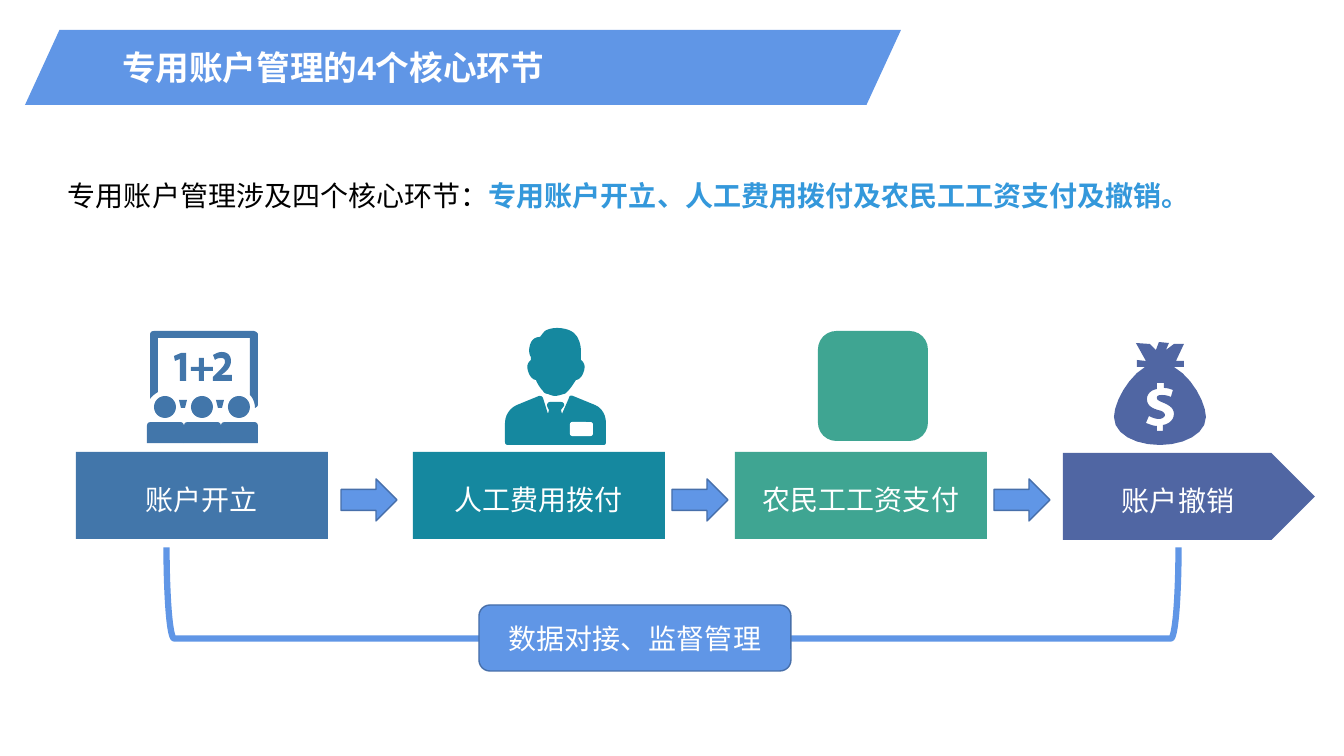
from pptx import Presentation
from pptx import util as u
from pptx.dml.color import RGBColor
from pptx.enum import shapes, text

PX = 914400 / 100.8
FONT = "Arial"
WHITE, BLACK, BLUE, EDGE, ACCENT = "FFFFFF", "000000", "6096E6", "476FAA", "3498DB"
OPENING, LABOUR, WAGES, CLOSING = "4276AA", "15889F", "3FA592", "5066A3"
KIND = shapes.MSO_SHAPE

BOARD = [(154, 331), (254, 331), (257, 332, 258, 333, 258, 335), (258, 404),
         (258, 406, 257, 407, 255, 408), (255, 403, 253, 398, 250, 395), (250, 338),
         (158, 338), (158, 392), (155, 394, 152, 396, 150, 399), (150, 335),
         (150, 333, 151, 331, 154, 331)]
ONE = [(181, 353), (186, 353), (186, 381), (180, 381), (180, 359), (175, 361), (174, 356)]
PLUS = [(199, 358), (204, 358), (204, 367), (213, 367), (213, 371), (204, 371),
        (204, 381), (199, 381), (199, 371), (191, 371), (191, 367), (199, 367)]
TWO = [(222, 352), (228, 352, 231, 356, 231, 361), (231, 366, 228, 370, 224, 373),
       (221, 375), (232, 375), (232, 381), (213, 381), (213, 377), (216, 374),
       (222, 368, 225, 365, 225, 362), (225, 359, 224, 358, 221, 358),
       (218, 358, 216, 359, 215, 360), (213, 355), (215, 354, 218, 352, 222, 352)]
SUIT = [(539, 396), (541, 396, 542, 396, 543, 398), (548, 414), (549, 410), (547, 406),
        (547, 404, 548, 402, 550, 402), (561, 402), (563, 402, 565, 404, 564, 406),
        (561, 410), (562, 414), (569, 398), (569, 396, 571, 395, 573, 396), (595, 405),
        (602, 408, 606, 415, 606, 423), (606, 442), (606, 444, 605, 445, 604, 445),
        (508, 445), (506, 445, 505, 444, 505, 442), (505, 423),
        (505, 415, 510, 408, 517, 405)]
HEAD = [(557, 328), (562, 328, 569, 329, 574, 333), (582, 340, 581, 353, 581, 355),
        (581, 360), (582, 361, 582, 361, 583, 362), (585, 365, 585, 367, 584, 371),
        (582, 378, 578, 380, 576, 380), (574, 383, 571, 388, 568, 391),
        (566, 393, 565, 394, 564, 394), (560, 395, 558, 396, 555, 396),
        (553, 396, 550, 395, 548, 394), (546, 394, 544, 393, 543, 391),
        (540, 388, 537, 383, 536, 380), (534, 380, 530, 378, 528, 371),
        (527, 367, 527, 365, 529, 362), (531, 360), (531, 357),
        (530, 356, 528, 352, 530, 345), (532, 338, 537, 337, 540, 337),
        (541, 336, 542, 334, 545, 331), (548, 329, 553, 328, 557, 328)]
BAG = [(1159, 342), (1169, 343), (1166, 350), (1174, 344), (1184, 344), (1176, 361),
       (1184, 361), (1184, 367), (1174, 367), (1192, 377, 1206, 403, 1206, 417),
       (1206, 434, 1184, 445, 1160, 445), (1135, 445, 1114, 434, 1114, 417),
       (1114, 403, 1128, 377, 1145, 367), (1137, 367), (1137, 360), (1146, 361),
       (1136, 343), (1150, 344), (1156, 350)]
DOLLAR = [(1157, 383), (1157, 389), (1151, 390, 1147, 394, 1147, 399),
          (1147, 405, 1151, 408, 1158, 410), (1163, 411, 1165, 413, 1165, 415),
          (1165, 417, 1162, 419, 1159, 419), (1155, 419, 1151, 417, 1149, 416),
          (1146, 423), (1149, 424, 1153, 426, 1157, 426), (1157, 431), (1163, 431),
          (1163, 425), (1170, 424, 1174, 419, 1174, 414), (1174, 409, 1171, 406, 1164, 403),
          (1159, 401, 1157, 400, 1157, 398), (1157, 396, 1158, 395, 1162, 395),
          (1166, 395, 1169, 396, 1171, 397), (1173, 390),
          (1170, 389, 1168, 388, 1164, 388), (1164, 383)]


def px(length):
    return u.Emu(round(length * PX))


def colour(value):
    return RGBColor.from_string(value)


def flatten(outline, steps=6):
    points = []
    for part in outline:
        if len(part) == 2:
            points.append(part)
            continue
        curve = [points[-1], part[:2], part[2:4], part[4:]]
        for step in range(1, steps + 1):
            t = step / steps
            weights = ((1 - t) ** 3, 3 * t * (1 - t) ** 2, 3 * t * t * (1 - t), t ** 3)
            points.append(tuple(sum(w * p[axis] for w, p in zip(weights, curve))
                                for axis in (0, 1)))
    return [(px(x), px(y)) for x, y in points]


class Deck:
    """Holds the slide and draws styled elements on it."""

    def __init__(self):
        self.file = Presentation()
        self.file.slide_width, self.file.slide_height = px(1344), px(756)
        self.slide = self.file.slides.add_slide(self.file.slide_layouts[5])

    def paint(self, shape, fill=None, line=None, weight=1):
        shape.shadow.inherit = False
        if fill:
            shape.fill.solid()
            shape.fill.fore_color.rgb = colour(fill)
        else:
            shape.fill.background()
        if line:
            shape.line.color.rgb = colour(line)
            shape.line.width = u.Pt(weight)
        else:
            shape.line.fill.background()
        return shape

    def shape(self, kind, box, fill=None, line=None, weight=1):
        item = self.slide.shapes.add_shape(kind, *map(px, box))
        return self.paint(item, fill, line, weight)

    def label(self, shape, runs, size=20, align=text.PP_ALIGN.CENTER,
              anchor=text.MSO_ANCHOR.MIDDLE, spacing=None):
        frame = shape.text_frame
        frame.word_wrap = True
        frame.auto_size = text.MSO_AUTO_SIZE.NONE
        frame.vertical_anchor = anchor
        paragraph = frame.paragraphs[0]
        paragraph.alignment = align
        if spacing:
            paragraph.line_spacing = spacing
        for words, ink, bold in runs:
            run = paragraph.add_run()
            run.text = words
            run.font.name, run.font.size, run.font.bold = FONT, u.Pt(size), bold
            run.font.color.rgb = colour(ink)

    def title(self, words, box, banner):
        heading = self.slide.shapes.title
        banner.element.addnext(heading.element)
        heading.left, heading.top, heading.width, heading.height = map(px, box)
        self.label(heading, [(words, WHITE, True)], 24, text.PP_ALIGN.LEFT)

    def sentence(self, box, runs):
        area = self.slide.shapes.add_textbox(*map(px, box))
        self.label(area, runs, align=text.PP_ALIGN.LEFT,
                   anchor=text.MSO_ANCHOR.TOP, spacing=1.3)

    def icon(self, fill, *outlines):
        first, *others = map(flatten, outlines)
        builder = self.slide.shapes.build_freeform(*first[0])
        builder.add_line_segments(first[1:])
        for points in others:
            builder.move_to(*points[0])
            builder.add_line_segments(points[1:])
        self.paint(builder.convert_to_shape(), fill)


def main():
    deck = Deck()

    bracket = deck.shape(KIND.LEFT_BRACKET, (627, 87, 91, 1012), line=BLUE, weight=4.5)
    bracket.rotation = 270
    banner = deck.shape(KIND.PARALLELOGRAM, (25, 30, 876, 75), BLUE)
    banner.adjustments[0] = 0.46
    deck.title("专用账户管理的4个核心环节", (112, 30, 740, 75), banner)

    steps = [(76, 452, "账户开立", OPENING, KIND.RECTANGLE),
             (413, 452, "人工费用拨付", LABOUR, KIND.RECTANGLE),
             (735, 452, "农民工工资支付", WAGES, KIND.RECTANGLE),
             (1063, 453, "账户撤销", CLOSING, KIND.PENTAGON)]
    for left, top, name, fill, kind in steps:
        step = deck.shape(kind, (left, top, 252, 87), fill)
        deck.label(step, [(name, WHITE, False)], spacing=1.2)

    deck.icon(OPENING, BOARD, ONE, PLUS, TWO)
    for pupil in range(3):
        shift = 37 * pupil
        deck.shape(KIND.OVAL, (154 + shift, 396, 22, 22), OPENING)
        deck.shape(KIND.ROUND_2_SAME_RECTANGLE, (147 + shift, 422, 37, 21), OPENING)
        if pupil < 2:
            deck.icon(OPENING, [(179 + shift, 400), (187 + shift, 400),
                                (185 + shift, 408), (181 + shift, 408)])
    deck.icon(LABOUR, SUIT, HEAD)
    deck.shape(KIND.ROUNDED_RECTANGLE, (570, 422, 23, 14), WHITE)
    deck.shape(KIND.ROUNDED_RECTANGLE, (818, 331, 110, 110), WAGES)
    deck.icon(CLOSING, BAG, DOLLAR)

    deck.sentence((58, 163, 1120, 50),
                  [("专用账户管理涉及四个核心环节：", BLACK, False),
                   ("专用账户开立、人工费用拨付及农民工工资支付及撤销。", ACCENT, True)])

    supervision = deck.shape(KIND.ROUNDED_RECTANGLE, (479, 605, 312, 66), BLUE, EDGE)
    deck.label(supervision, [("数据对接、监督管理", WHITE, False)])
    for left in (341, 672, 994):
        deck.shape(KIND.RIGHT_ARROW, (left, 479, 56, 42), BLUE, EDGE)

    deck.file.save("out.pptx")


if __name__ == "__main__":
    main()
